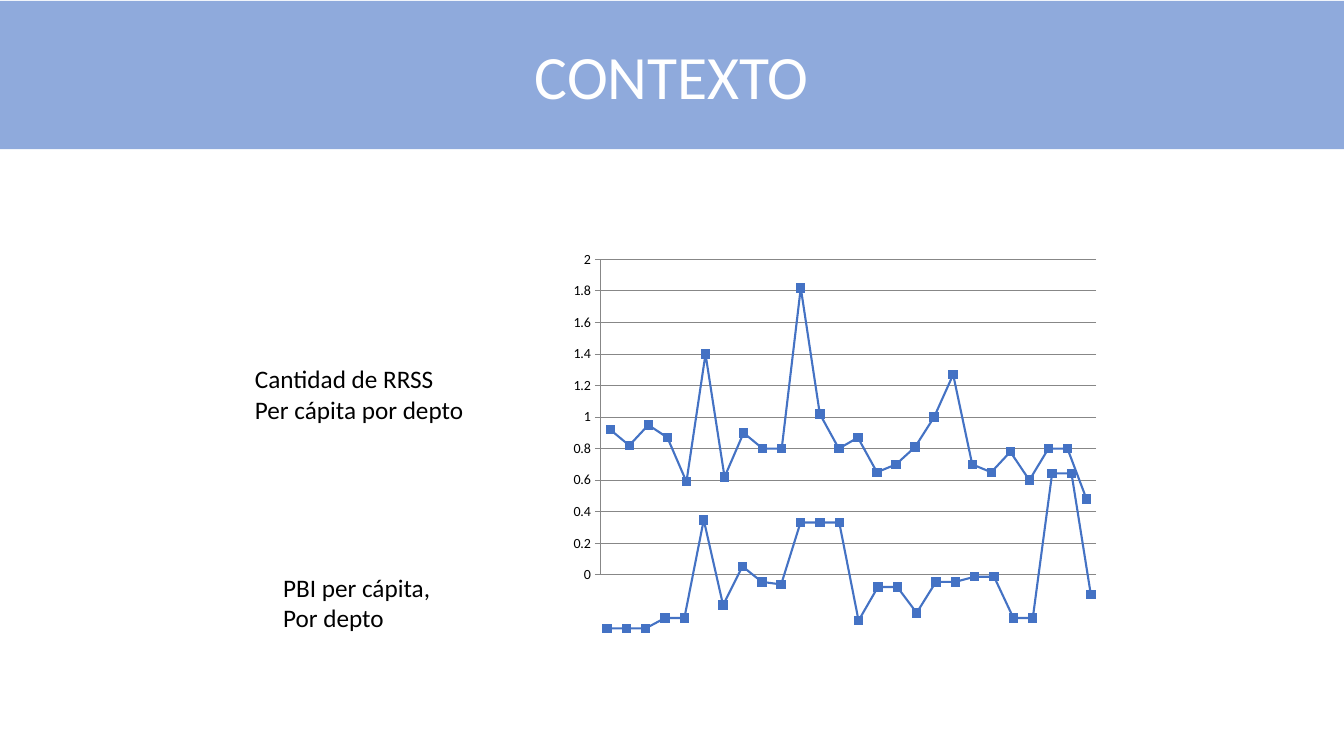
from lxml import etree
from pptx import Presentation
from pptx.chart.data import CategoryChartData
from pptx.dml.color import RGBColor
from pptx.enum.chart import XL_CHART_TYPE as ChartType, XL_MARKER_STYLE as Marker
from pptx.enum.chart import XL_TICK_MARK as Tick
from pptx.enum.shapes import MSO_SHAPE as Shape
from pptx.enum.text import MSO_ANCHOR as Anchor, MSO_AUTO_SIZE as AutoSize, PP_ALIGN as Align
from pptx.oxml.ns import qn
from pptx.util import Inches, Pt

FONT = "Calibri"
BLACK = RGBColor(0x00, 0x00, 0x00)
WHITE = RGBColor(0xFF, 0xFF, 0xFF)
BLUE = RGBColor(0x44, 0x72, 0xC4)
BANNER = RGBColor(0x8F, 0xAA, 0xDC)
GREY = RGBColor(0x87, 0x87, 0x87)

WIDTH, HEIGHT = Inches(13.33), Inches(7.5)

WASTE_PER_CAPITA = [
    0.92, 0.82, 0.95, 0.87, 0.59, 1.4, 0.62, 0.9, 0.8, 0.8, 1.82, 1.02, 0.8,
    0.87, 0.65, 0.7, 0.81, 1, 1.27, 0.7, 0.65, 0.78, 0.6, 0.8, 0.8, 0.48]
GDP_PER_CAPITA = [
    40, 40, 40, 44, 44, 82, 49, 64, 58, 57, 81, 81, 81,
    43, 56, 56, 46, 58, 58, 60, 60, 44, 44, 100, 100, 53]


def inches(left, top, width, height):
    return [Inches(length) for length in (left, top, width, height)]


def set_format(target, **values):
    for name, value in values.items():
        setattr(target, name, value)


def set_font(font, size, color):
    set_format(font, name=FONT, size=Pt(size))
    font.color.rgb = color


def add_banner(page, title):
    banner = page.shapes.add_shape(Shape.RECTANGLE, 0, Inches(0.01), WIDTH, Inches(1.47))
    banner.shadow.inherit = False
    banner.fill.solid()
    banner.fill.fore_color.rgb = BANNER
    banner.line.fill.background()
    banner.text_frame.vertical_anchor = Anchor.MIDDLE
    para = banner.text_frame.paragraphs[0]
    set_format(para, text=title, alignment=Align.CENTER)
    set_font(para.font, 44, WHITE)


def add_label(page, lines, place):
    box = page.shapes.add_textbox(*inches(*place))
    frame = box.text_frame
    set_format(frame, text="\n".join(lines), word_wrap=False,
               auto_size=AutoSize.SHAPE_TO_FIT_TEXT)
    for para in frame.paragraphs:
        set_font(para.font, 18, BLACK)


def fix_plot_area(chart, shares):
    """Place the inner plot area by left, top, width and height shares of the chart."""
    area = chart.element.find(".//" + qn("c:plotArea"))
    for old in area.findall(qn("c:layout")):
        area.remove(old)
    layout = etree.Element(qn("c:layout"))
    manual = etree.SubElement(layout, qn("c:manualLayout"))
    settings = [("layoutTarget", "inner"), ("xMode", "edge"), ("yMode", "edge")]
    for tag, value in settings + list(zip("xywh", shares)):
        etree.SubElement(manual, qn("c:" + tag)).set("val", str(value))
    area.insert(0, layout)


def add_line_chart(page, values, place, plot_shares, top_value, step, show_axis):
    data = CategoryChartData()
    data.categories = [str(number) for number in range(1, len(values) + 1)]
    data.add_series("Series 1", values)
    chart = page.shapes.add_chart(ChartType.LINE_MARKERS, *inches(*place), data).chart
    set_format(chart, has_legend=False, has_title=False)
    set_font(chart.font, 10, BLACK)
    fix_plot_area(chart, plot_shares)
    chart.plots[0].vary_by_categories = False

    chart.category_axis.visible = False
    axis = chart.value_axis
    set_format(axis, visible=show_axis, has_major_gridlines=show_axis,
               minimum_scale=0, maximum_scale=top_value, major_unit=step,
               major_tick_mark=Tick.OUTSIDE, minor_tick_mark=Tick.NONE)
    if show_axis:
        for line in (axis.format.line, axis.major_gridlines.format.line):
            line.color.rgb = GREY
            line.width = Pt(0.75)

    series = chart.plots[0].series[0]
    series.smooth = False
    series.format.line.color.rgb = BLUE
    series.format.line.width = Pt(1.5)
    set_format(series.marker, style=Marker.SQUARE, size=6)
    series.marker.format.fill.solid()
    series.marker.format.fill.fore_color.rgb = BLUE
    series.marker.format.line.color.rgb = BLUE


def main():
    deck = Presentation()
    set_format(deck, slide_width=WIDTH, slide_height=HEIGHT)
    page = deck.slides.add_slide(deck.slide_layouts[6])
    add_label(page, ["Cantidad de RRSS", "Per cápita por depto"], (2.43, 3.56, 2.29, 0.71))
    add_label(page, ["PBI per cápita,", "Por depto"], (2.71, 5.63, 1.73, 0.71))
    add_line_chart(page, WASTE_PER_CAPITA, (5.58, 2.42, 5.4, 3.42),
                   (0.07, 0.045, 0.91, 0.915), top_value=2, step=0.2, show_axis=True)
    add_line_chart(page, GDP_PER_CAPITA, (5.82, 4.35, 5.2, 3),
                   (0.02, 0.03, 0.96, 0.94), top_value=110, step=10, show_axis=False)
    add_banner(page, "CONTEXTO")
    deck.save("out.pptx")


if __name__ == "__main__":
    main()
